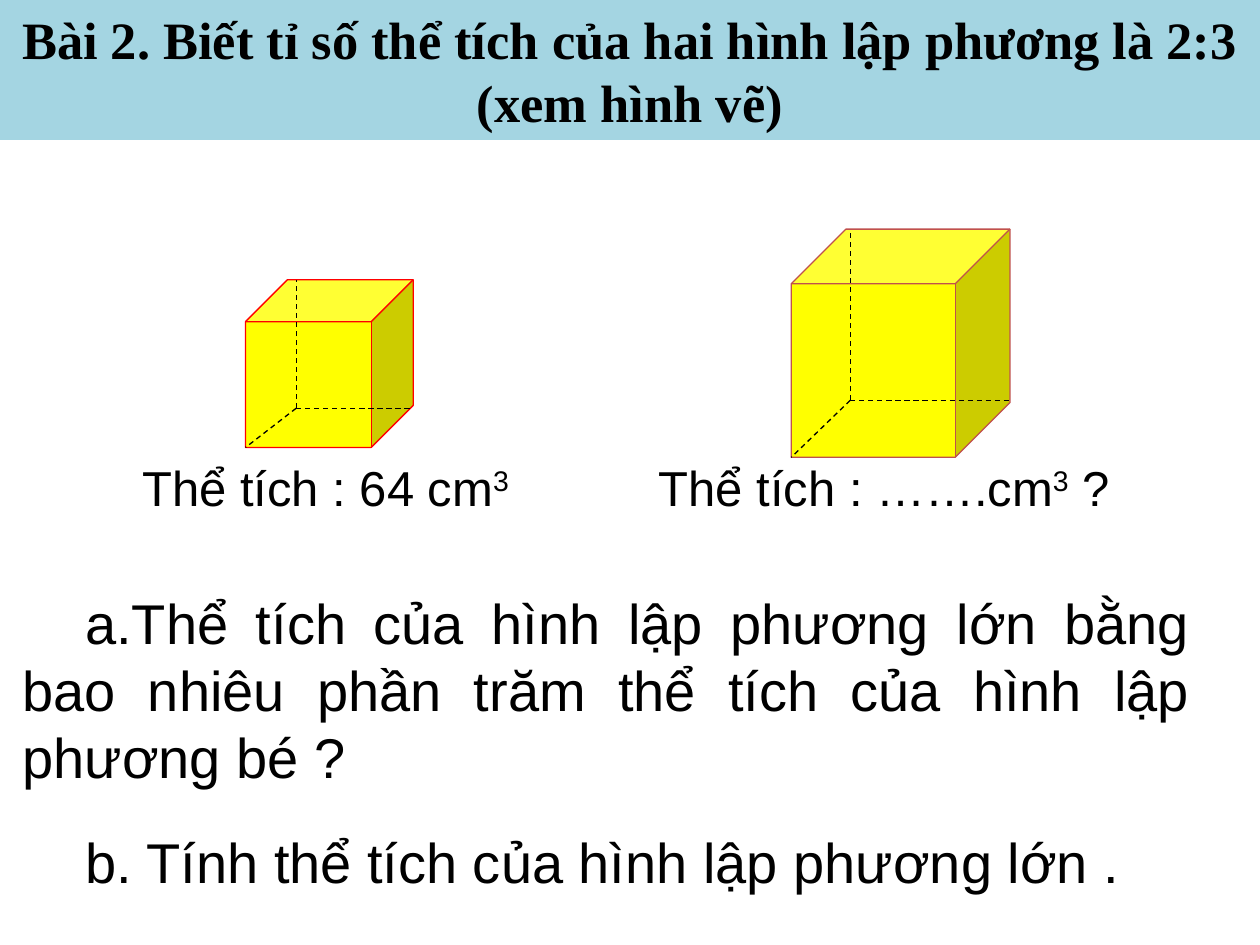
from lxml import etree
from pptx import Presentation
from pptx.dml.color import RGBColor
from pptx.enum import dml, shapes, text
from pptx.oxml.ns import qn
from pptx.util import Cm, Pt

BLACK = RGBColor(0, 0, 0)
TEAL = RGBColor(0x4B, 0xAC, 0xC6)
YELLOW = RGBColor(0xFF, 0xFF, 0)
RED = RGBColor(0xFF, 0, 0)
BRICK = RGBColor(0xC0, 0x50, 0x4D)

deck = Presentation()
deck.slide_width, deck.slide_height = Cm(25.4), Cm(19.05)
slide = deck.slides.add_slide(deck.slide_layouts[6])


def style(para, size, face="Arial", bold=False):
    para.font.size, para.font.name = Pt(size), face
    para.font.bold, para.font.color.rgb = bold, BLACK


def add_text(box, wrap):
    """Add an empty text box and return its first paragraph."""
    frame = slide.shapes.add_textbox(*map(Cm, box)).text_frame
    frame.word_wrap = wrap
    return frame.paragraphs[0]


# Title band
band = slide.shapes.add_shape(shapes.MSO_SHAPE.RECTANGLE, 0, 0, Cm(25.4), Cm(2.82))
band.shadow.inherit = False
band.fill.solid()
band.fill.fore_color.rgb = TEAL
tint = band.fill._xPr.find(".//" + qn("a:srgbClr"))
etree.SubElement(tint, qn("a:alpha"), val="50000")
band.line.fill.background()
band.text_frame.word_wrap = True
band.text_frame.vertical_anchor = text.MSO_ANCHOR.MIDDLE
title = band.text_frame.paragraphs[0]
title.text = "Bài 2. Biết tỉ số thể tích của hai hình lập phương là 2:3 (xem hình vẽ)"
title.alignment = text.PP_ALIGN.CENTER
style(title, 30, "Times New Roman", True)

# Volume captions
for box, lead, tail in (
    ((2.62, 9.09, 8.03, 1.45), "Thể tích : 64 cm", ""),
    ((13.03, 9.09, 9.75, 1.45), "Thể tích : …….cm", " ?"),
):
    para = add_text(box, False)
    style(para, 28)
    para.add_run().text = lead
    power = para.add_run()
    power.text = "3"
    power.font._element.set("baseline", "30000")
    if tail:
        para.add_run().text = tail

# Cubes: box, outline, hidden corner
for (x, y, w, h), edge, (cx, cy) in (
    ((4.95, 5.64, 3.38, 3.38), RED, (5.97, 8.23)),
    ((15.95, 4.62, 4.41, 4.6), BRICK, (17.14, 8.07)),
):
    cube = slide.shapes.add_shape(shapes.MSO_SHAPE.CUBE, Cm(x), Cm(y), Cm(w), Cm(h))
    cube.shadow.inherit = False
    cube.adjustments[0] = 0.25
    cube.fill.solid()
    cube.fill.fore_color.rgb = YELLOW
    cube.line.color.rgb = edge
    cube.line.width = Pt(0.75)
    for ex, ey in ((x, y + h), (cx, y), (x + w, cy)):
        dash = slide.shapes.add_connector(
            shapes.MSO_CONNECTOR.STRAIGHT, Cm(cx), Cm(cy), Cm(ex), Cm(ey))
        dash.line.color.rgb = BLACK
        dash.line.width = Pt(0.75)
        dash.line.dash_style = dml.MSO_LINE.DASH
        etree.SubElement(dash._element.spPr, qn("a:effectLst"))

# Questions
for box, words, align in (
    ((0.2, 11.73, 24.05, 4.37),
     "a.Thể tích của hình lập phương lớn bằng bao nhiêu phần trăm "
     "thể tích của hình lập phương bé ?", text.PP_ALIGN.JUSTIFY),
    ((0.2, 16.56, 24.1, 1.63),
     "b. Tính thể tích của hình lập phương lớn .", text.PP_ALIGN.LEFT),
):
    para = add_text(box, True)
    para.text = words
    para.alignment = align
    style(para, 32)
    para._p.get_or_add_pPr().set("indent", str(Cm(1.27)))

deck.save("out.pptx")
